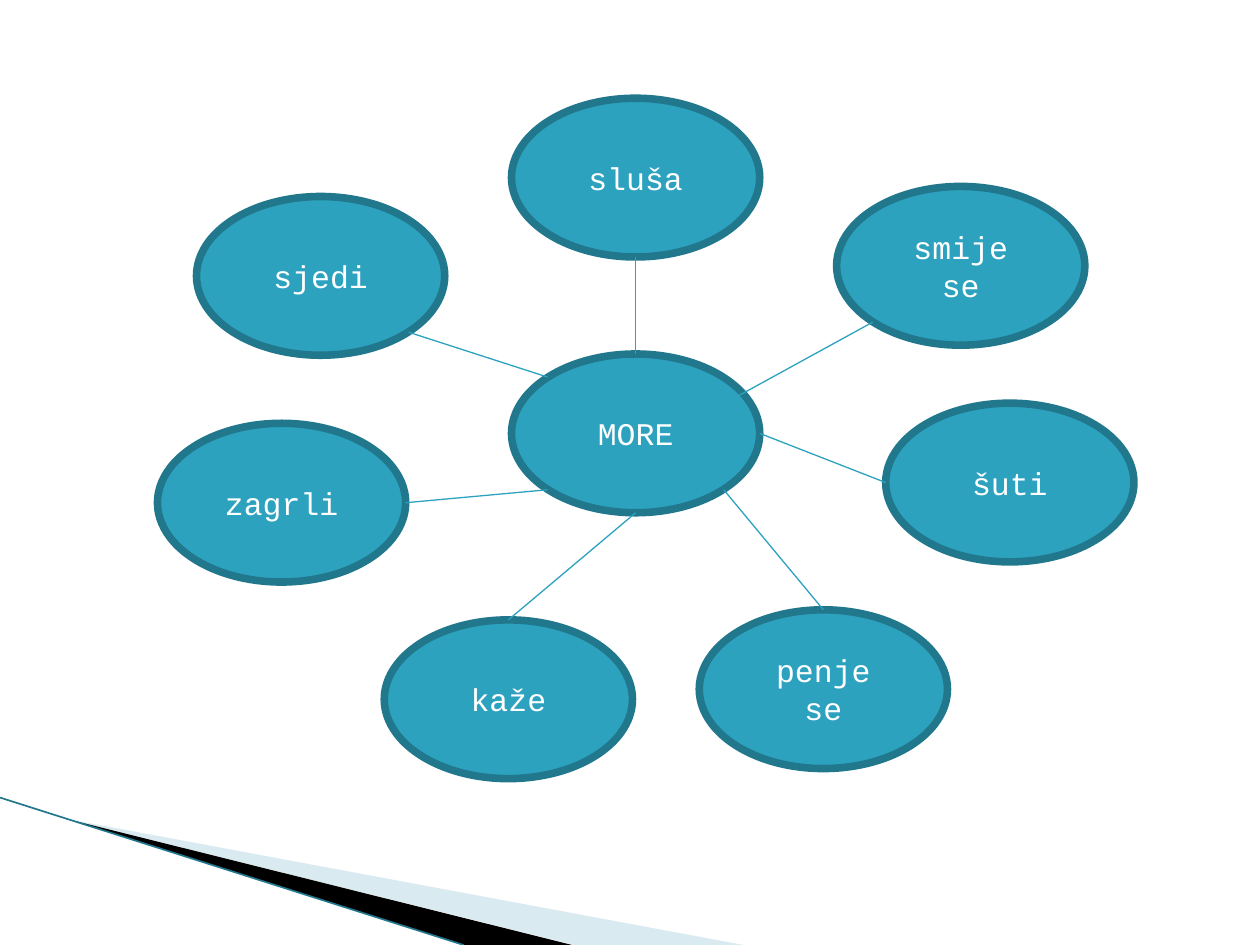
from lxml import etree
from pptx import Presentation
from pptx.dml.color import RGBColor
from pptx.enum.shapes import MSO_CONNECTOR, MSO_SHAPE
from pptx.enum.text import MSO_ANCHOR, PP_ALIGN
from pptx.oxml.ns import qn
from pptx.util import Inches, Pt

TEAL = "2DA2BF"
DARK_TEAL = "21788D"
OVAL_WIDTH, OVAL_HEIGHT = 1.97, 1.26

# Points on an oval, as fractions of its half width and half height
DIAGONAL = 0.71
TOP, BOTTOM, LEFT, RIGHT = (0, -1), (0, 1), (-1, 0), (1, 0)
TOP_LEFT, BOTTOM_LEFT = (-DIAGONAL, -DIAGONAL), (-DIAGONAL, DIAGONAL)
BOTTOM_RIGHT = (DIAGONAL, DIAGONAL)
INNER_RIGHT = (0.66, -0.33)

HUB = ("MORE", 2.5, 2.03)
# Word, left and top in the map, point on its oval, point on the hub
VERBS = [
    ("penje se", 4.3, 4.06, TOP, BOTTOM_RIGHT),
    ("zagrli", 0, 2.58, RIGHT, BOTTOM_LEFT),
    ("sluša", 2.81, 0, BOTTOM, TOP),
    ("kaže", 1.8, 4.14, TOP, BOTTOM),
    ("sjedi", 0.31, 0.78, BOTTOM_RIGHT, TOP_LEFT),
    ("šuti", 5.78, 2.42, LEFT, RIGHT),
    ("smije se", 5.39, 0.7, BOTTOM_LEFT, INNER_RIGHT),
]
HUB = ("MORE", 2.81, 2.03)


def color(hex_value):
    return RGBColor.from_string(hex_value)


def add_line(page, start, end, hex_value, width):
    line = page.shapes.add_connector(
        MSO_CONNECTOR.STRAIGHT, *(Inches(value) for value in (*start, *end)))
    line.line.color.rgb = color(hex_value)
    line.line.width = Pt(width)
    etree.SubElement(line._element.spPr, qn("a:effectLst"))


def add_wedge(page, points, hex_value):
    corners = [(Inches(x), Inches(y)) for x, y in points]
    builder = page.shapes.build_freeform(*corners[0])
    builder.add_line_segments(corners[1:])
    wedge = builder.convert_to_shape()
    wedge.shadow.inherit = False
    wedge.fill.solid()
    wedge.fill.fore_color.rgb = color(hex_value)
    wedge.line.fill.background()
    return wedge


def add_corner_sweep(page, left, top, width, height):
    """Draw the pointed wedges that fan out towards the bottom edge."""
    bottom = top + height
    tip = (left + 0.53, top + 0.17)
    pale = add_wedge(
        page, [tip, (left + width, bottom), (left + 4.56, bottom)], "A0CBDC")
    pale_color = pale._element.spPr.find(qn("a:solidFill"))[0]
    etree.SubElement(pale_color, qn("a:alpha"), val="40000")
    add_wedge(
        page, [tip, (left + 4.54, bottom), (left + 3.68, bottom)], "000000")
    add_line(page, (left, top), (left + 3.68, bottom), DARK_TEAL, 0.95)


def add_oval(page, left, top, word):
    oval = page.shapes.add_shape(
        MSO_SHAPE.OVAL, Inches(left), Inches(top),
        Inches(OVAL_WIDTH), Inches(OVAL_HEIGHT))
    oval.shadow.inherit = False
    oval.fill.solid()
    oval.fill.fore_color.rgb = color(TEAL)
    oval.line.color.rgb = color(DARK_TEAL)
    oval.line.width = Pt(4.33)
    frame = oval.text_frame
    frame.word_wrap = True
    frame.vertical_anchor = MSO_ANCHOR.MIDDLE
    para = frame.paragraphs[0]
    para.text = word
    para.alignment = PP_ALIGN.CENTER
    para.font.name = "Courier New"
    para.font.size = Pt(18)
    para.font.color.rgb = color("FFFFFF")


def oval_point(left, top, site):
    return (left + OVAL_WIDTH / 2 * (1 + site[0]),
            top + OVAL_HEIGHT / 2 * (1 + site[1]))


def add_word_map(page, left, top):
    hub_word, hub_x, hub_y = HUB
    hub_left, hub_top = left + hub_x, top + hub_y
    add_oval(page, hub_left, hub_top, hub_word)
    for word, x, y, _, _ in VERBS:
        add_oval(page, left + x, top + y, word)
    for _, x, y, verb_site, hub_site in VERBS:
        add_line(page, oval_point(left + x, top + y, verb_site),
                 oval_point(hub_left, hub_top, hub_site), TEAL, 0.75)


def main():
    deck = Presentation()
    deck.slide_width, deck.slide_height = Inches(10), Inches(7.5)
    page = deck.slides.add_slide(deck.slide_layouts[6])
    add_corner_sweep(page, 0, 6.33, 5.9, 1.17)
    add_word_map(page, 1.25, 0.78)
    deck.save("out.pptx")


if __name__ == "__main__":
    main()
